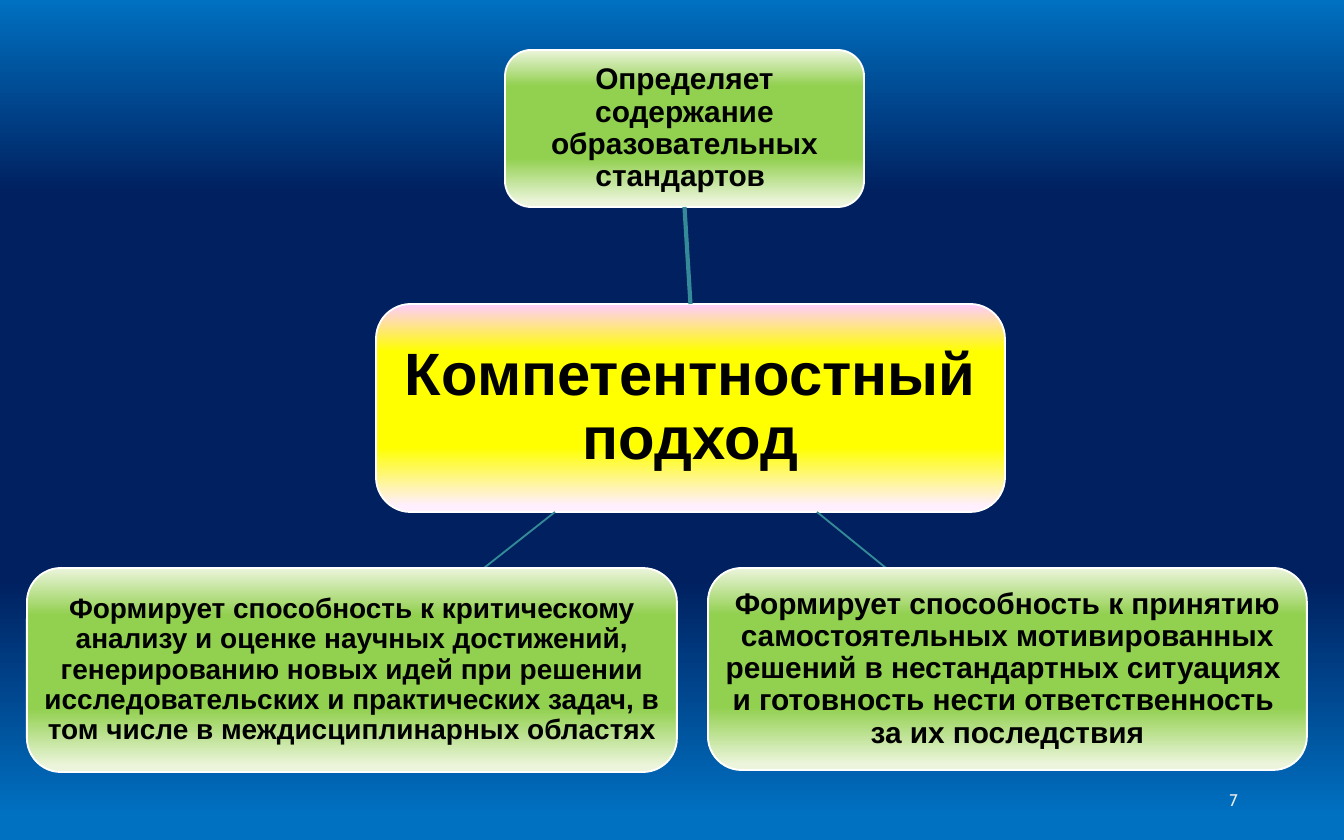
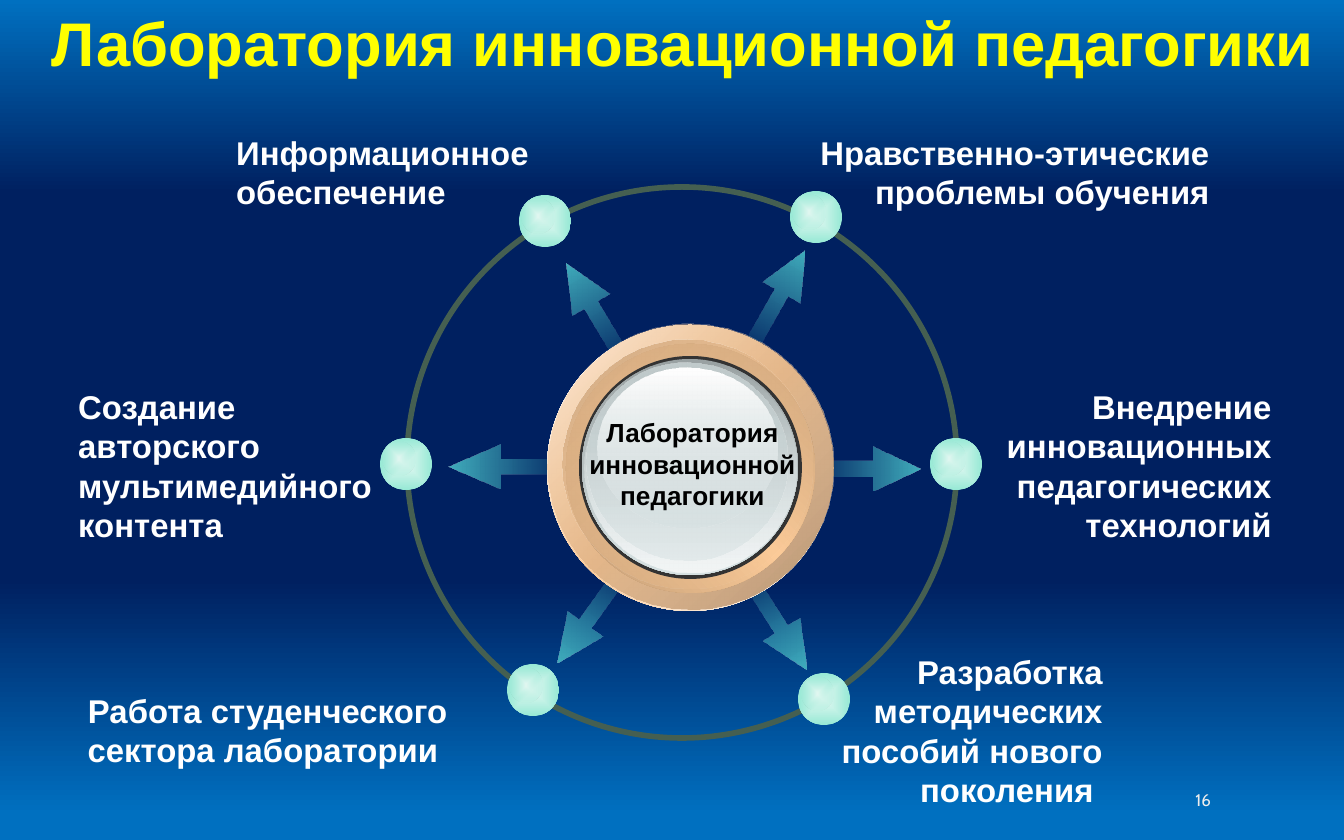
from dataclasses import dataclass
from typing import Optional

from lxml.etree import SubElement
from pptx import Presentation
from pptx.dml.color import RGBColor
from pptx.enum.shapes import MSO_CONNECTOR, MSO_SHAPE
from pptx.enum.text import MSO_ANCHOR, MSO_AUTO_SIZE, PP_ALIGN
from pptx.oxml.ns import qn
from pptx.util import Emu, Pt

SLIDE_W, SLIDE_H = 1344, 840
EMU_PER_PX = 9144000 / SLIDE_W

COLORS = {
    "sky": "0070C0", "navy": "002060",
    "white": "FFFFFF", "black": "000000", "yellow": "FFFF00",
    "pink": "FFCCFF", "pale_pink": "FFEFFF",
    "green": "92D050", "pale_green": "ECF5DB",
    "link": "348B97", "ring": "455F51",
    "arrow_tail": "3EA5B4", "arrow_head": "41AEBD",
    "mint": "97E9D5", "pale_mint": "E3F8F2",
    "peach": "FBCA98", "bronze": "B4906D", "tan": "C09B74", "sand": "CEA67D",
    "rim": "333333", "steel": "99A1A2", "silver": "D6E1E2",
    "frost": "F2F5F5", "ash": "C1CBCC",
    "grey": "9E9E9E", "light_grey": "EDEDED",
}

FONT = "Arial"
NUMBER_FONT = "Cabin"
LEFT, CENTER, RIGHT = PP_ALIGN.LEFT, PP_ALIGN.CENTER, PP_ALIGN.RIGHT


@dataclass(frozen=True)
class Stop:
    pos: int
    color: str
    alpha: int = 100


@dataclass(frozen=True)
class Gradient:
    stops: tuple[Stop, ...]
    angle: Optional[int] = 90


@dataclass(frozen=True)
class Box:
    left: int
    top: int
    width: int
    height: int


@dataclass(frozen=True)
class Card:
    box: Box
    text: str
    size: int
    fill: Gradient
    inset: int = 5


@dataclass(frozen=True)
class Arrow:
    cx: int
    cy: int
    rotation: float
    length: int = 117


@dataclass(frozen=True)
class Label:
    box: Box
    text: str
    align: PP_ALIGN
    size: float = 17.6
    color: str = "white"


@dataclass(frozen=True)
class Disc:
    box: Box
    fill: Gradient


def band(edge: str, middle: str, end: str) -> Gradient:
    return Gradient((Stop(0, edge), Stop(23, middle), Stop(69, middle), Stop(97, end)))


def blend(*stops: Stop, angle: Optional[int] = 90) -> Gradient:
    return Gradient(stops, angle)


BACKGROUND = band("sky", "navy", "sky")
GREEN_CARD = band("pale_green", "green", "pale_green")
YELLOW_CARD = band("pink", "yellow", "pale_pink")
NUMBER_FILL = blend(Stop(0, "grey"), Stop(28, "light_grey"), Stop(100, "white"))
ARROW_FILL = blend(Stop(0, "arrow_tail", 0), Stop(100, "arrow_head"), angle=0)
NODE_FILL = blend(Stop(0, "pale_mint"), Stop(100, "mint"), angle=None)
GLINT_FILL = blend(Stop(0, "pale_mint"), Stop(100, "mint", 0), angle=None)

CORE = Card(Box(376, 304, 629, 208), "Компетентностный подход", 32, YELLOW_CARD, 12)
STANDARDS = Card(Box(505, 50, 359, 157),
                 "Определяет содержание образовательных стандартов ", 16, GREEN_CARD)
DECISIONS = Card(Box(708, 568, 599, 202),
                 "Формирует способность к принятию самостоятельных мотивированных "
                 "решений в нестандартных ситуациях \nи готовность нести "
                 "ответственность \nза их последствия", 16, GREEN_CARD)
ANALYSIS = Card(Box(27, 568, 650, 204),
                "Формирует способность к критическому анализу и оценке научных "
                "достижений, генерированию новых идей при решении "
                "исследовательских и практических задач, в том числе в "
                "междисциплинарных областях", 15, GREEN_CARD)

ARROW_H = 43
ARROWS = [
    Arrow(775, 301, 299.6), Arrow(775, 620, 57.8), Arrow(596, 313, 239.5),
    Arrow(591, 614, 125.6), Arrow(861, 468, 0), Arrow(511, 466, 180, 126),
]

RING = Box(407, 187, 550, 551)
NODE = 52
NODES = [(519, 195), (380, 438), (507, 664), (790, 191), (930, 438), (798, 673)]

HUB = [
    Disc(Box(547, 325, 286, 286),
         blend(Stop(0, "white"), Stop(50, "peach"), Stop(100, "white"), angle=45)),
    Disc(Box(547, 324, 286, 286),
         blend(Stop(0, "peach", 32), Stop(100, "bronze"), angle=45)),
    Disc(Box(566, 344, 249, 249),
         blend(Stop(0, "tan"), Stop(50, "peach"), Stop(100, "tan"), angle=315)),
    Disc(Box(563, 340, 249, 249),
         blend(Stop(0, "sand"), Stop(100, "peach", 0), angle=45)),
    Disc(Box(579, 356, 223, 223), blend(Stop(0, "rim"), Stop(100, "rim"))),
    Disc(Box(582, 359, 216, 216), blend(Stop(0, "steel"), Stop(100, "silver"))),
    Disc(Box(585, 362, 211, 211), blend(Stop(0, "silver", 0), Stop(100, "frost"))),
    Disc(Box(587, 363, 200, 198), blend(Stop(0, "ash"), Stop(100, "silver", 48))),
    Disc(Box(598, 368, 179, 160), blend(Stop(0, "white"), Stop(100, "silver", 38))),
]

LABELS = [
    Label(Box(531, 410, 323, 108), "Лаборатория инновационной педагогики",
          CENTER, 14, "black"),
    Label(Box(774, 126, 449, 94), "Нравственно-этические проблемы обучения", RIGHT),
    Label(Box(223, 126, 349, 134), "Информационное обеспечение", LEFT),
    Label(Box(933, 380, 352, 175),
          "Внедрение инновационных педагогических технологий", RIGHT),
    Label(Box(722, 645, 394, 175),
          "Разработка методических пособий нового поколения ", RIGHT),
    Label(Box(65, 380, 339, 175),
          "Создание авторского мультимедийного контента", LEFT),
    Label(Box(58, 684, 403, 94), "Работа студенческого сектора лаборатории ", RIGHT),
]


def px(n: float) -> Emu:
    return Emu(round(n * EMU_PER_PX))


def rgb(name: str) -> RGBColor:
    return RGBColor.from_string(COLORS[name])


def place(box: Box) -> tuple[Emu, Emu, Emu, Emu]:
    return px(box.left), px(box.top), px(box.width), px(box.height)


def paint(fill, element, gradient: Gradient) -> None:
    fill.gradient()
    grad = element.find(".//" + qn("a:gradFill"))
    grad.clear()
    grad.set("rotWithShape", "1")
    stops = SubElement(grad, qn("a:gsLst"))
    for stop in gradient.stops:
        gs = SubElement(stops, qn("a:gs"), pos=str(stop.pos * 1000))
        color = SubElement(gs, qn("a:srgbClr"), val=COLORS[stop.color])
        if stop.alpha < 100:
            SubElement(color, qn("a:alpha"), val=str(stop.alpha * 1000))
    if gradient.angle is None:
        shade = SubElement(grad, qn("a:path"), path="shape")
        SubElement(shade, qn("a:fillToRect"), {side: "50000" for side in "ltrb"})
    else:
        SubElement(grad, qn("a:lin"), ang=str(gradient.angle * 60000), scaled="0")


def add_slide(prs, layout: int, number: str):
    s = prs.slides.add_slide(prs.slide_layouts[layout])
    paint(s.background.fill, s._element, BACKGROUND)
    return s


def add_number(s, number: str, left: int) -> None:
    tb = s.shapes.add_textbox(*place(Box(left, 778, 302, 44)))
    tf = tb.text_frame
    tf.word_wrap = True
    tf.vertical_anchor = MSO_ANCHOR.MIDDLE
    r = write(tf, number, 9, "white", RIGHT, font=NUMBER_FONT, bold=False)
    paint(r.font.fill, r._r, NUMBER_FILL)


def write(tf, text: str, size: float, color: str, align: PP_ALIGN,
          spacing: Optional[float] = None, font: str = FONT, bold: bool = True):
    p = tf.paragraphs[0]
    p.text = text
    p.alignment = align
    p.line_spacing = spacing
    for r in p.runs:
        r.font.name = font
        r.font.size = Pt(size)
        r.font.bold = bold
        r.font.color.rgb = rgb(color)
    return p.runs[0]


def set_insets(tf, side: int, vertical: int) -> None:
    tf.margin_left = tf.margin_right = px(side)
    tf.margin_top = tf.margin_bottom = px(vertical)


def add_figure(s, kind: MSO_SHAPE, box: Box, gradient: Optional[Gradient],
               line: Optional[str] = None, width: float = 1):
    sp = s.shapes.add_shape(kind, *place(box))
    sp.shadow.inherit = False
    if line:
        sp.line.color.rgb = rgb(line)
        sp.line.width = Pt(width)
    else:
        sp.line.fill.background()
    if gradient:
        paint(sp.fill, sp._element, gradient)
    else:
        sp.fill.background()
    return sp


def add_card(s, card: Card):
    sp = add_figure(s, MSO_SHAPE.ROUNDED_RECTANGLE, card.box, card.fill, "white")
    tf = sp.text_frame
    tf.word_wrap = True
    tf.vertical_anchor = MSO_ANCHOR.MIDDLE
    set_insets(tf, card.inset, card.inset)
    write(tf, card.text, card.size, "black", CENTER, 0.9)
    return sp


def add_link(s, x1: int, y1: int, x2: int, y2: int, width: float = 1):
    cx = s.shapes.add_connector(MSO_CONNECTOR.STRAIGHT, px(x1), px(y1), px(x2), px(y2))
    cx.line.color.rgb = rgb("link")
    cx.line.width = Pt(width)
    SubElement(cx._element.spPr, qn("a:effectLst"))
    return cx


def add_arrow(s, arrow: Arrow) -> None:
    box = Box(arrow.cx - arrow.length // 2, arrow.cy - ARROW_H // 2,
              arrow.length, ARROW_H)
    sp = add_figure(s, MSO_SHAPE.RIGHT_ARROW, box, ARROW_FILL)
    sp.adjustments[0] = 0.35
    sp.adjustments[1] = 1.11 if arrow.length == 117 else 1.21
    sp.rotation = arrow.rotation


def add_node(s, left: int, top: int) -> None:
    add_figure(s, MSO_SHAPE.OVAL, Box(left, top, NODE, NODE), NODE_FILL)
    add_figure(s, MSO_SHAPE.OVAL, Box(left + 3, top + 4, 32, 34), GLINT_FILL)


def add_label(s, label: Label) -> None:
    tf = s.shapes.add_textbox(*place(label.box)).text_frame
    tf.word_wrap = True
    tf.auto_size = MSO_AUTO_SIZE.SHAPE_TO_FIT_TEXT
    write(tf, label.text, label.size, label.color, label.align)


def set_title(s, text: str) -> None:
    title = s.shapes.title
    title.left, title.top, title.width, title.height = place(Box(22, 9, 1322, 75))
    tf = title.text_frame
    tf.word_wrap = True
    tf.auto_size = MSO_AUTO_SIZE.SHAPE_TO_FIT_TEXT
    tf.vertical_anchor = MSO_ANCHOR.MIDDLE
    set_insets(tf, 8, 4)
    write(tf, text, 33, "yellow", CENTER, 0.9)


def build_approach(prs) -> None:
    s = add_slide(prs, 6, "7")
    core = add_card(s, CORE)
    standards = add_card(s, STANDARDS)
    stem = add_link(s, 688, 304, 687, 207, 2.25)
    stem.begin_connect(core, 0)
    stem.end_connect(standards, 2)
    add_link(s, 817, 512, 886, 568)
    add_link(s, 555, 512, 484, 568)
    add_card(s, DECISIONS)
    add_card(s, ANALYSIS)
    add_number(s, "7", 949)


def build_laboratory(prs) -> None:
    s = add_slide(prs, 5, "16")
    set_title(s, "Лаборатория инновационной педагогики")
    add_number(s, "16", 922)
    for arrow in ARROWS:
        add_arrow(s, arrow)
    add_figure(s, MSO_SHAPE.OVAL, RING, None, "ring", 3)
    for left, top in NODES:
        add_node(s, left, top)
    for disc in HUB:
        add_figure(s, MSO_SHAPE.OVAL, disc.box, disc.fill)
    for label in LABELS:
        add_label(s, label)


def main() -> None:
    prs = Presentation()
    prs.slide_width, prs.slide_height = px(SLIDE_W), px(SLIDE_H)
    build_approach(prs)
    build_laboratory(prs)
    prs.save("out.pptx")


if __name__ == "__main__":
    main()
